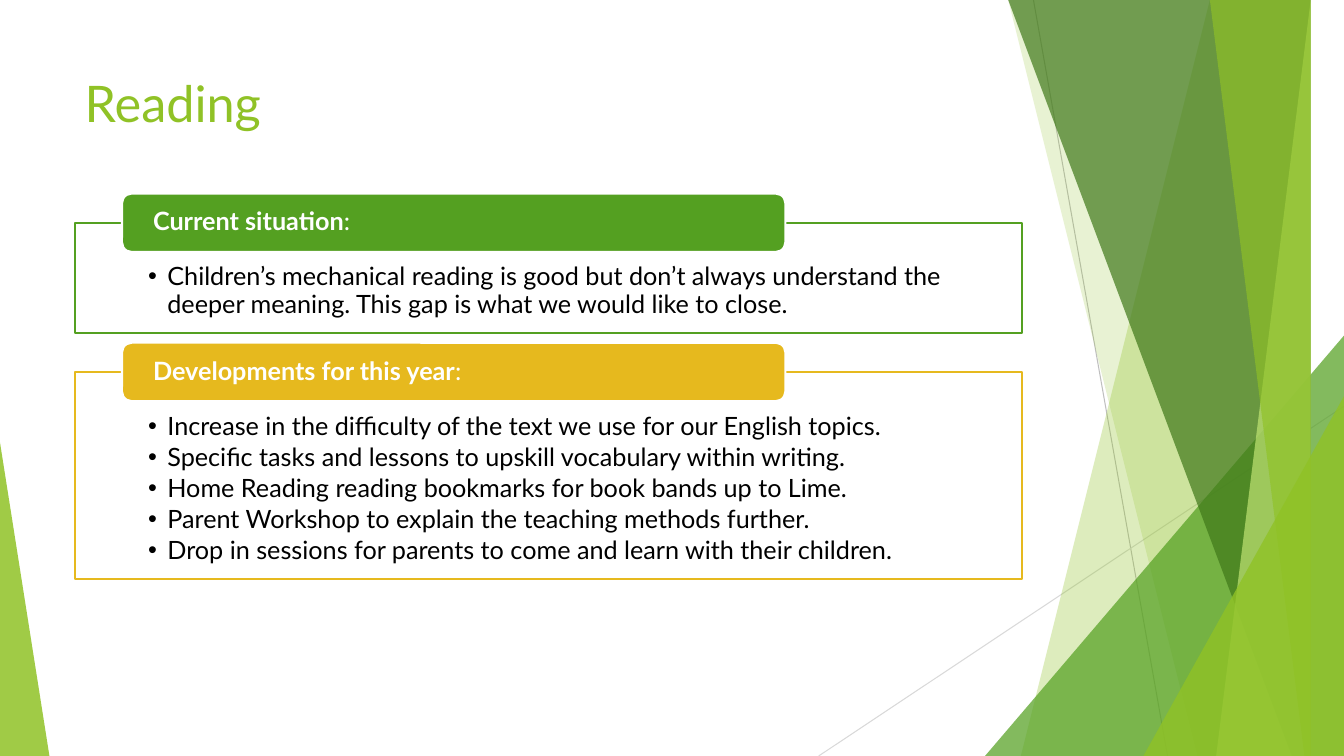
from pptx import Presentation
from pptx.dml.color import RGBColor
from pptx.enum.shapes import MSO_CONNECTOR, MSO_SHAPE
from pptx.enum.text import MSO_ANCHOR, MSO_AUTO_SIZE, PP_ALIGN
from pptx.oxml.ns import qn
from pptx.util import Inches, Pt
from lxml.etree import SubElement

# Content
TITLE = "Reading"
SECTIONS = [
    dict(heading="Current situation", color="54A021", top=2.21, height=1.09, items=[
        "Children’s mechanical reading is good but don’t always understand the "
        "deeper meaning. This gap is what we would like to close.",
    ]),
    dict(heading="Developments for this year", color="E6B91E", top=3.69, height=2.05, items=[
        "Increase in the difficulty of the text we use for our English topics.",
        "Specific tasks and lessons to upskill vocabulary within writing.",
        "Home Reading reading bookmarks for book bands up to Lime.",
        "Parent Workshop to explain the teaching methods further.",
        "Drop in sessions for parents to come and learn with their children.",
    ]),
]

# Theme
THEME = dict(font="Lato", title_size=36, text_size=18, line=1.5, hairline=0.75,
             green="90C226", white="FFFFFF", black="000000")

# Decoration, back to front
W, H, TOP = 13.33, 7.5, -0.01
HAIRLINES = [((10.25, 0), (11.58, H), "BFBFBF"), ((W, 4.03), (8.12, H), "D9D9D9")]
# Facets reach the right edge: ("band", top x, bottom x) or ("triangle", left, top, width, apex)
FACETS = [
    ("band", (12.28, 10.04), "90C226", 30),
    ("band", (10.5, 11.83), "90C226", 20),
    ("triangle", (9.77, 3.33, 3.56, 1), "54A021", 72),
    ("band", (10.21, 12.91), "3F7819", 70),
    ("band", (13.03, 11.92), "C0E474", 70),
    ("band", (11.96, 13.18), "90C226", 65),
    ("triangle", (11.34, 3.93, 1.99, 1), "90C226", 80),
    ("triangle", (0, 4.39, 0.49, 0), "90C226", 85),
]

# Layout of the sections
LEFT, WIDTH = 0.74, 9.4
TAB_LEFT, TAB_WIDTH, TAB_HEIGHT = 1.21, 6.58, 0.58
TAB_INSET = 0.28
FRAME_INSETS = (0.73, 0.41, 0.73, 0.14)
HANG = 0.19


def rgb(color):
    return RGBColor.from_string(color)


def paint(sp, color, alpha=100, line=None):
    sp.fill.solid()
    sp.fill.fore_color.rgb = rgb(color)
    if alpha < 100:
        clr = sp.fill._xPr.find(qn("a:solidFill"))[0]
        SubElement(clr, qn("a:alpha"), val=str(alpha * 1000))
    if line:
        sp.line.color.rgb = rgb(line)
        sp.line.width = Pt(THEME["line"])
    else:
        sp.line.fill.background()


def place(sp, left, top, width, height):
    sp.left, sp.top, sp.width, sp.height = map(Inches, (left, top, width, height))


def set_frame(tf, insets, anchor):
    tf.word_wrap = True
    tf.auto_size = MSO_AUTO_SIZE.NONE
    tf.vertical_anchor = anchor
    (tf.margin_left, tf.margin_top,
     tf.margin_right, tf.margin_bottom) = map(Inches, insets)


def add_run(p, text, color, size=THEME["text_size"], bold=False):
    r = p.add_run()
    r.text = text
    r.font.name = THEME["font"]
    r.font.size = Pt(size)
    r.font.bold = bold
    r.font.color.rgb = rgb(color)


def add_decoration(shapes):
    for start, end, color in HAIRLINES:
        line = shapes.add_connector(MSO_CONNECTOR.STRAIGHT, *map(Inches, start + end))
        line.line.color.rgb = rgb(color)
        line.line.width = Pt(THEME["hairline"])
        SubElement(line._element.spPr, qn("a:effectLst"))
    for kind, geometry, color, alpha in FACETS:
        if kind == "band":
            top_x, bottom_x = geometry
            builder = shapes.build_freeform(top_x, TOP, scale=Inches(1))
            builder.add_line_segments([(W, TOP), (W, H), (bottom_x, H)], close=True)
            sp = builder.convert_to_shape()
        else:
            left, top, width, apex = geometry
            sp = shapes.add_shape(MSO_SHAPE.ISOSCELES_TRIANGLE,
                                  *map(Inches, (left, top, width, H - top)))
            sp.adjustments[0] = apex
        sp.shadow.inherit = False
        paint(sp, color, alpha)


def add_section(shapes, frame, section):
    # Outlined list
    place(frame, LEFT, section["top"], WIDTH, section["height"])
    paint(frame, THEME["white"], 90, section["color"])
    tf = frame.text_frame
    set_frame(tf, FRAME_INSETS, MSO_ANCHOR.TOP)
    for i, item in enumerate(section["items"]):
        p = tf.add_paragraph() if i else tf.paragraphs[0]
        pPr = p._p.get_or_add_pPr()
        pPr.set("marL", str(Inches(HANG)))
        pPr.set("indent", str(-Inches(HANG)))
        SubElement(pPr, qn("a:buChar"), char="•")
        p.line_spacing = 0.9
        p.space_before = Pt(0)
        p.space_after = Pt(0.15 * THEME["text_size"])
        add_run(p, item, THEME["black"])

    # Heading tab centred on the top edge
    tab = shapes.add_shape(MSO_SHAPE.ROUNDED_RECTANGLE, *map(Inches, (
        TAB_LEFT, section["top"] - TAB_HEIGHT / 2, TAB_WIDTH, TAB_HEIGHT)))
    tab.shadow.inherit = False
    paint(tab, section["color"], line=THEME["white"])
    set_frame(tab.text_frame, (TAB_INSET, 0, TAB_INSET, 0), MSO_ANCHOR.MIDDLE)
    p = tab.text_frame.paragraphs[0]
    p.alignment = PP_ALIGN.LEFT
    p.line_spacing = 0.9
    add_run(p, section["heading"], THEME["white"], bold=True)
    add_run(p, ":", THEME["white"])


def main():
    prs = Presentation()
    prs.slide_width, prs.slide_height = Inches(W), Inches(H)
    slide = prs.slides.add_slide(prs.slide_layouts[3])
    title, *frames = slide.placeholders
    add_decoration(slide.shapes)

    # Title
    place(title, LEFT, 0.67, WIDTH, 1.44)
    set_frame(title.text_frame, (0.1, 0.05, 0.1, 0.05), MSO_ANCHOR.TOP)
    p = title.text_frame.paragraphs[0]
    p.alignment = PP_ALIGN.LEFT
    add_run(p, TITLE, THEME["green"], THEME["title_size"])

    # Sections
    for frame, section in zip(frames, SECTIONS):
        add_section(slide.shapes, frame, section)
    prs.save("out.pptx")


if __name__ == "__main__":
    main()
